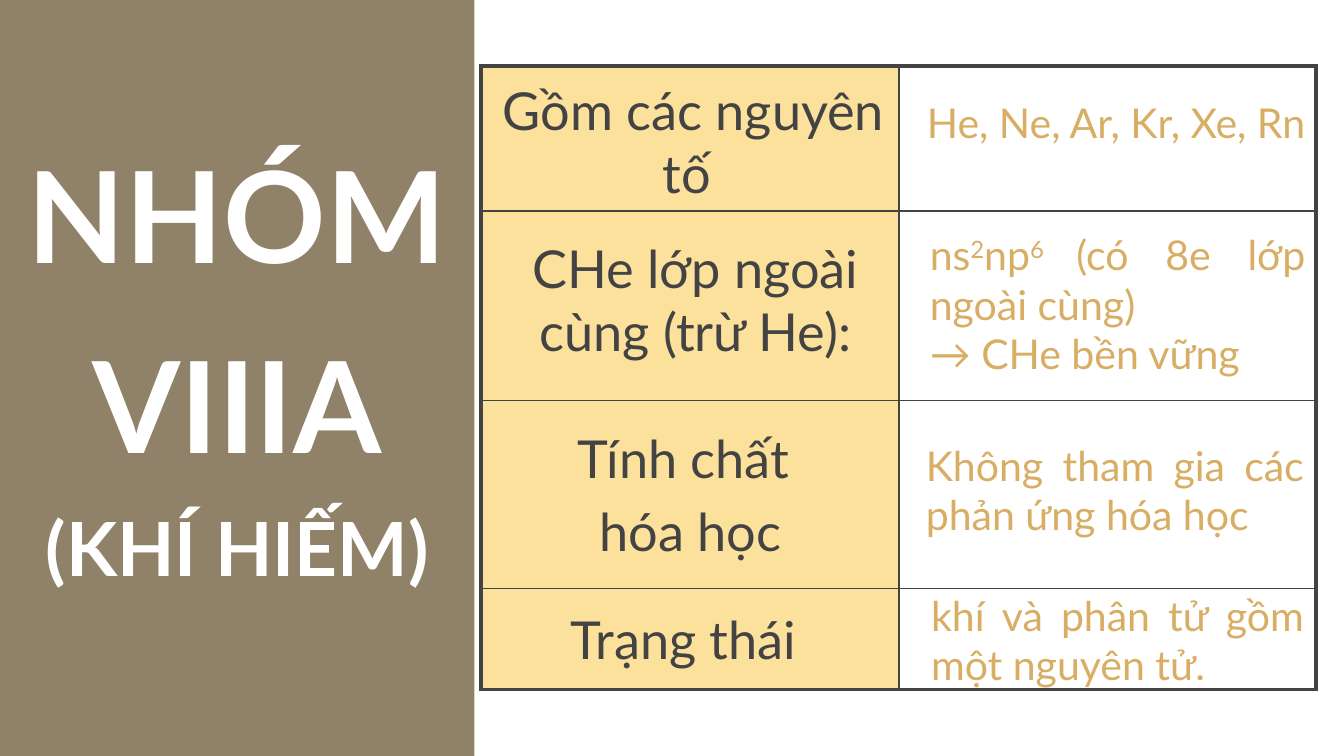
"""Build the slide on the noble gases of group VIIIA."""
import pptx
import pptx.dml.color
import pptx.enum.shapes
import pptx.enum.text
import pptx.oxml.ns
import pptx.util
from lxml import etree

Inches = pptx.util.Inches
Pt = pptx.util.Pt
RGBColor = pptx.dml.color.RGBColor
ALIGN = pptx.enum.text.PP_ALIGN
MIDDLE = pptx.enum.text.MSO_ANCHOR.MIDDLE
qn = pptx.oxml.ns.qn

WHITE = RGBColor(0xFF, 0xFF, 0xFF)
TAUPE = RGBColor(0x90, 0x82, 0x69)
CREAM = RGBColor(0xFC, 0xE1, 0x9C)
CHARCOAL = RGBColor(0x43, 0x43, 0x43)
GOLD = RGBColor(0xD8, 0xAE, 0x65)
FONT = "Lato"
THICK, THIN = 2.25, 1

SLIDE_WIDTH = 10
SLIDE_HEIGHT = SLIDE_WIDTH * 9 / 16
PANEL_WIDTH = 3.53
GRID_LEFT, GRID_TOP = 3.58, 0.49
COLUMN_WIDTHS = [3.11, 3.1]
ROW_HEIGHTS = [1.08, 1.41, 1.4, 0.75]

TITLE = [[("NHÓM\vVIIIA\v", {}), ("(KHÍ HIẾM)", {"size": 40})]]
CELL_LABELS = {
    2: [[("Tính chất ", {})], [("hóa học", {})]],
    3: [[("Trạng thái ", {})]],
}
LABELS = [
    ((3.64, 0.52, 3.04, 1.06), [[("Gồm các nguyên tố ", {})]]),
    ((3.66, 1.56, 3.03, 1.33), [[("CHe lớp ngoài cùng (trừ He):", {})]]),
]
RAISED = {"baseline": 30}
ANSWERS = [
    ((6.79, 0.67, 3.03, 0.48), ALIGN.CENTER, [[("He, Ne, Ar, Kr, Xe, Rn", {})]]),
    ((6.82, 1.55, 2.99, 1.42), ALIGN.JUSTIFY, [
        [("ns", {}), ("2", RAISED), ("np", {}), ("6 ", RAISED),
         ("(có 8e lớp ngoài cùng) ", {})],
        [("→ CHe bền vững", {})],
    ]),
    ((6.79, 2.98, 3.01, 1.33), ALIGN.JUSTIFY,
     [[("Không tham gia các phản ứng hóa học", {})]]),
    ((6.83, 4.39, 2.97, 0.74), ALIGN.JUSTIFY,
     [[("khí và phân tử gồm một nguyên tử.", {})]]),
]


def write(frame, paragraphs, size=28, color=CHARCOAL, bold=False,
          align=ALIGN.CENTER, spacing=None, before=0):
    """Fill a text frame with paragraphs of (text, overrides) runs."""
    for index, pieces in enumerate(paragraphs):
        paragraph = frame.add_paragraph() if index else frame.paragraphs[0]
        paragraph.alignment = align
        paragraph.line_spacing = spacing
        paragraph.space_before = Pt(before)
        for text, changes in pieces:
            for position, line in enumerate(text.split("\v")):
                if position:
                    paragraph.add_line_break()
                if not line:
                    continue
                run = paragraph.add_run()
                run.text = line
                run.font.name = FONT
                run.font.size = Pt(changes.get("size", size))
                run.font.bold = bold
                run.font.color.rgb = color
                if "baseline" in changes:
                    run.font._element.set("baseline", str(changes["baseline"] * 1000))


def add_text(slide, box, paragraphs, inset=0.05, **style):
    """Place a wrapped, vertically centred text box."""
    frame = slide.shapes.add_textbox(*map(Inches, box)).text_frame
    frame.word_wrap = True
    frame.vertical_anchor = MIDDLE
    frame.margin_top = frame.margin_bottom = Inches(inset)
    write(frame, paragraphs, **style)


def set_borders(cell, widths):
    """Draw the left, right, top and bottom borders of a cell."""
    properties = cell._tc.get_or_add_tcPr()
    for index, (side, width) in enumerate(zip("LRTB", widths)):
        border = etree.Element(qn(f"a:ln{side}"), w=str(Pt(width)))
        fill = etree.SubElement(border, qn("a:solidFill"))
        etree.SubElement(fill, qn("a:srgbClr"), val=str(CHARCOAL))
        properties.insert(index, border)


def add_grid(slide):
    """Add the two-column table with its thick outer frame."""
    rows, columns = len(ROW_HEIGHTS), len(COLUMN_WIDTHS)
    grid = slide.shapes.add_table(
        rows, columns, Inches(GRID_LEFT), Inches(GRID_TOP),
        Inches(sum(COLUMN_WIDTHS)), Inches(sum(ROW_HEIGHTS))).table
    grid.first_row = grid.horz_banding = False
    for column, width in zip(grid.columns, COLUMN_WIDTHS):
        column.width = Inches(width)
    for r, height in enumerate(ROW_HEIGHTS):
        grid.rows[r].height = Inches(height)
        for c in range(columns):
            cell = grid.cell(r, c)
            cell.vertical_anchor = MIDDLE
            if c == 0:
                cell.fill.solid()
                cell.fill.fore_color.rgb = CREAM
                write(cell.text_frame, CELL_LABELS.get(r, []), before=5.6)
            else:
                cell.fill.background()
            outer = (c == 0, c == columns - 1, r == 0, r == rows - 1)
            set_borders(cell, [THICK if edge else THIN for edge in outer])


def main():
    deck = pptx.Presentation()
    deck.slide_width, deck.slide_height = Inches(SLIDE_WIDTH), Inches(SLIDE_HEIGHT)
    slide = deck.slides.add_slide(deck.slide_layouts[6])
    add_grid(slide)
    panel = slide.shapes.add_shape(
        pptx.enum.shapes.MSO_SHAPE.RECTANGLE, 0, 0,
        Inches(PANEL_WIDTH), Inches(SLIDE_HEIGHT))
    panel.shadow.inherit = False
    panel.fill.solid()
    panel.fill.fore_color.rgb = TAUPE
    panel.line.fill.background()
    add_text(slide, (0, 0.73, PANEL_WIDTH, 3.67), TITLE, inset=0.1,
             size=68, color=WHITE, bold=True, spacing=1.25)
    for box, label in LABELS:
        add_text(slide, box, label)
    for box, align, answer in ANSWERS:
        add_text(slide, box, answer, size=22, color=GOLD, align=align)
    deck.save("out.pptx")


if __name__ == "__main__":
    main()
